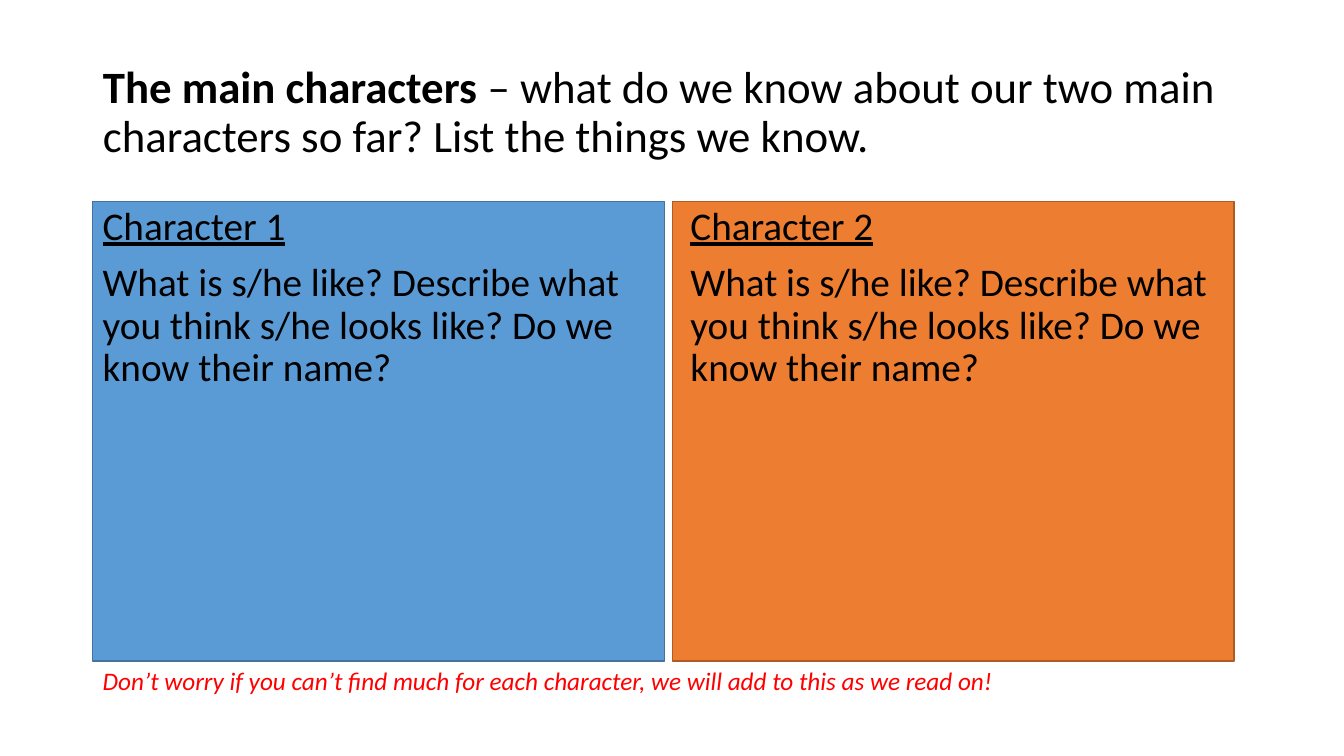
import dataclasses

import pptx
import pptx.dml.color
import pptx.enum.shapes
import pptx.enum.text
import pptx.util
from pptx.util import Inches


@dataclasses.dataclass(frozen=True)
class Theme:
    font: str = "Calibri"
    text: str = "000000"
    note: str = "FF0000"
    blue: str = "5B9BD5"
    blue_edge: str = "43739E"
    orange: str = "ED7D31"
    orange_edge: str = "AF5C24"
    title_size: int = 32
    body_size: int = 28
    note_size: int = 18


def rgb(value):
    return pptx.dml.color.RGBColor.from_string(value)


class SlideBuilder:
    def __init__(self, page, theme):
        self.page = page
        self.theme = theme

    def style(self, para, size, color):
        para.font.name = self.theme.font
        para.font.size = pptx.util.Pt(size)
        para.font.color.rgb = rgb(color)
        para.alignment = pptx.enum.text.PP_ALIGN.LEFT

    def title(self, lead, rest, left, top, width, height):
        box = self.page.shapes.title
        box.left, box.top = Inches(left), Inches(top)
        box.width, box.height = Inches(width), Inches(height)
        frame = box.text_frame
        frame.auto_size = pptx.enum.text.MSO_AUTO_SIZE.NONE
        frame.vertical_anchor = pptx.enum.text.MSO_ANCHOR.MIDDLE
        para = frame.paragraphs[0]
        self.style(para, self.theme.title_size, self.theme.text)
        para.line_spacing = 0.9
        for words, bold in ((lead, True), (rest, False)):
            span = para.add_run()
            span.text = words
            span.font.bold = bold

    def panel(self, left, top, width, height, fill, edge):
        box = self.page.shapes.add_shape(
            pptx.enum.shapes.MSO_SHAPE.RECTANGLE,
            Inches(left), Inches(top), Inches(width), Inches(height))
        box.shadow.inherit = False
        box.fill.solid()
        box.fill.fore_color.rgb = rgb(fill)
        box.line.color.rgb = rgb(edge)
        box.line.width = pptx.util.Pt(1)

    def prompt(self, heading, question, left, top, width, height):
        box = self.page.shapes.add_textbox(
            Inches(left), Inches(top), Inches(width), Inches(height))
        frame = box.text_frame
        frame.word_wrap = True
        frame.text = f"{heading}\n{question}"
        for para in frame.paragraphs:
            self.style(para, self.theme.body_size, self.theme.text)
            para.line_spacing = 0.9
            para.space_before = pptx.util.Pt(10)
        frame.paragraphs[0].font.underline = True

    def note(self, words, left, top, width, height):
        box = self.page.shapes.add_textbox(
            Inches(left), Inches(top), Inches(width), Inches(height))
        frame = box.text_frame
        frame.word_wrap = False
        frame.auto_size = pptx.enum.text.MSO_AUTO_SIZE.SHAPE_TO_FIT_TEXT
        frame.text = words
        para = frame.paragraphs[0]
        self.style(para, self.theme.note_size, self.theme.note)
        para.font.italic = True


def main():
    deck = pptx.Presentation()
    deck.slide_width, deck.slide_height = Inches(13.33), Inches(7.5)
    theme = Theme()
    page = deck.slides.add_slide(deck.slide_layouts[5])
    builder = SlideBuilder(page, theme)
    margin, panel_top = 0.92, 2

    # Title
    builder.title("The main characters ",
                  "– what do we know about our two main characters so far? "
                  "List the things we know.", margin, 0.4, 11.5, 1.45)

    # Character panels with their prompts
    question = ("What is s/he like? Describe what you think s/he looks like? "
                "Do we know their name?")
    characters = (
        ("Character 1", margin, 5.67, margin, theme.blue, theme.blue_edge),
        ("Character 2", 6.67, 5.57, 6.75, theme.orange, theme.orange_edge),
    )
    for heading, left, width, text_left, fill, edge in characters:
        builder.panel(left, panel_top, width, 4.56, fill, edge)
        builder.prompt(heading, question, text_left, panel_top, 5.67, 4.76)

    # Closing note
    builder.note("Don’t worry if you can’t find much for each character, "
                 "we will add to this as we read on!", margin, 6.55, 9.17, 0.4)

    deck.save("out.pptx")


if __name__ == "__main__":
    main()
